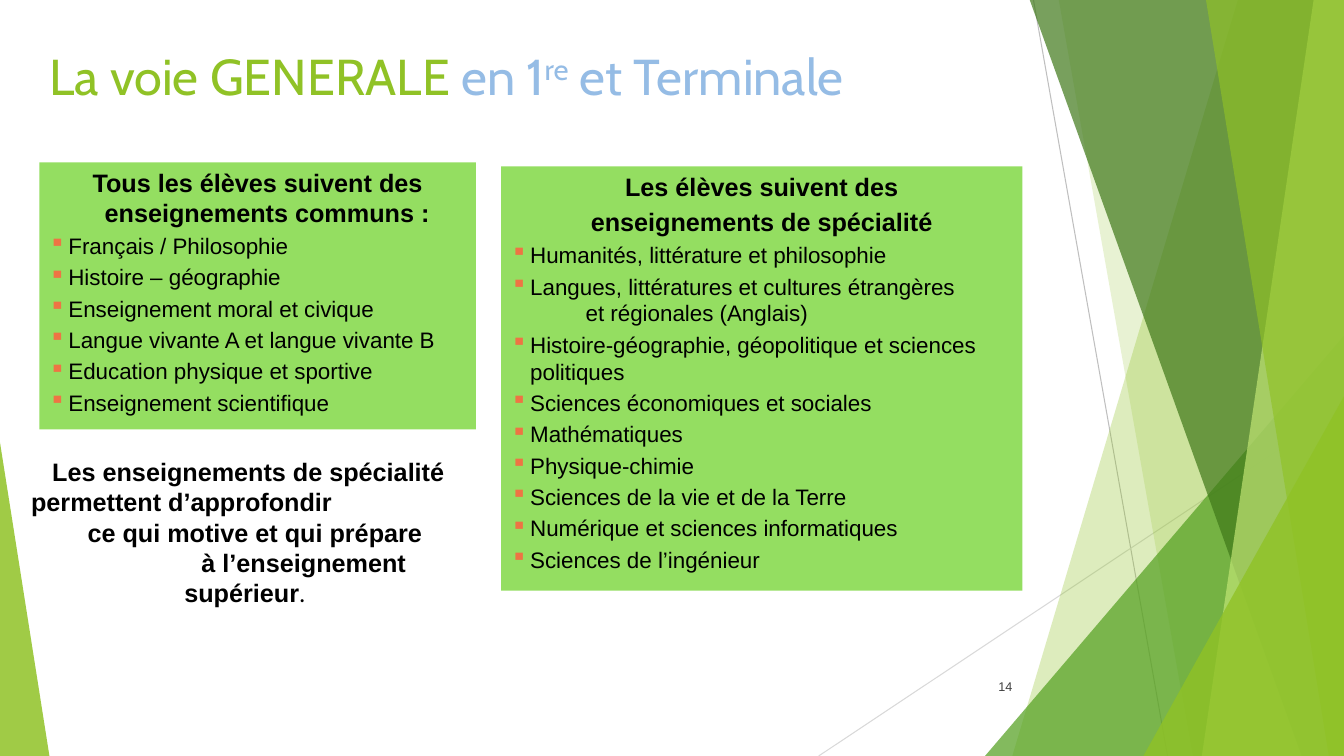
from lxml import etree
from pptx import Presentation
from pptx.dml.color import RGBColor
from pptx.enum.shapes import MSO_CONNECTOR, MSO_SHAPE
from pptx.enum.text import MSO_ANCHOR, MSO_AUTO_SIZE, PP_ALIGN
from pptx.oxml.ns import qn
from pptx.util import Inches, Pt

LEFT, CENTER, RIGHT = PP_ALIGN.LEFT, PP_ALIGN.CENTER, PP_ALIGN.RIGHT
TOP, MIDDLE = MSO_ANCHOR.TOP, MSO_ANCHOR.MIDDLE
RECT, TRIANGLE = MSO_SHAPE.RECTANGLE, MSO_SHAPE.RIGHT_TRIANGLE
ISOSCELES = MSO_SHAPE.ISOSCELES_TRIANGLE
STRAIGHT = MSO_CONNECTOR.STRAIGHT
GROW = MSO_AUTO_SIZE.SHAPE_TO_FIT_TEXT

BLACK = RGBColor(0x00, 0x00, 0x00)
DARK_GREY = RGBColor(0x40, 0x40, 0x40)
MID_GREY = RGBColor(0xBF, 0xBF, 0xBF)
LIGHT_GREY = RGBColor(0xD9, 0xD9, 0xD9)
LIME = RGBColor(0x90, 0xC2, 0x26)
PALE_LIME = RGBColor(0xC0, 0xE4, 0x74)
GREEN = RGBColor(0x54, 0xA0, 0x21)
DARK_GREEN = RGBColor(0x3F, 0x78, 0x19)
PANEL_GREEN = RGBColor(0x94, 0xDE, 0x61)
SKY = RGBColor(0x95, 0xBC, 0xE5)
BULLET = "EE7444"

WIDTH, HEIGHT, RIM = 13.33, 7.5, -0.01
HANG = 0.19


class Deck:
    font, head_size, item_size = "Arial", 18, 16

    def __init__(self):
        self.prs = Presentation()
        self.prs.slide_width, self.prs.slide_height = Inches(WIDTH), Inches(HEIGHT)
        self.s = self.prs.slides.add_slide(self.prs.slide_layouts[5])

    def paint(self, sp, color, opacity=100):
        sp.shadow.inherit = False
        sp.line.fill.background()
        sp.fill.solid()
        sp.fill.fore_color.rgb = color
        if opacity < 100:
            clr = sp.fill._xPr.find(qn("a:solidFill"))[0]
            etree.SubElement(clr, qn("a:alpha"), val=str(opacity * 1000))

    def line(self, x1, y1, x2, y2, color):
        c = self.s.shapes.add_connector(STRAIGHT, *map(Inches, (x1, y1, x2, y2)))
        c.line.color.rgb = color
        c.line.width = Pt(0.75)
        etree.SubElement(c._element.spPr, qn("a:effectLst"))

    def band(self, top_x, bottom_x, color, opacity):
        """Slanted band that reaches the right edge of the slide."""
        corners = [(WIDTH, RIM), (WIDTH, HEIGHT), (bottom_x, HEIGHT)]
        fb = self.s.shapes.build_freeform(Inches(top_x), Inches(RIM))
        fb.add_line_segments([(Inches(x), Inches(y)) for x, y in corners])
        self.paint(fb.convert_to_shape(), color, opacity)

    def triangle(self, x, y, w, apex, color, opacity):
        sp = self.s.shapes.add_shape(
            ISOSCELES, *map(Inches, (x, y, w, HEIGHT - y)))
        sp.adjustments[0] = apex
        self.paint(sp, color, opacity)

    def title(self, x, y, w, h, parts):
        sp = self.s.shapes.title
        sp.left, sp.top, sp.width, sp.height = map(Inches, (x, y, w, h))
        tf = sp.text_frame
        tf.vertical_anchor = TOP
        p = tf.paragraphs[0]
        p.alignment = LEFT
        p.font.name, p.font.size = "Cabin", Pt(36)
        for text, color, raised in parts:
            r = p.add_run()
            r.text = text
            r.font.color.rgb = color
            if raised:
                r.font._element.set("baseline", "30000")

    def paragraph(self, tf, text, size, bold=False, align=LEFT, before=0,
                  margin=0, indent=0, bullet=False, color=BLACK):
        p = tf.paragraphs[0]
        if p.runs:
            p = tf.add_paragraph()
        p.add_run().text = text
        p.alignment, p.space_before = align, Pt(before)
        f = p.font
        f.name, f.size, f.bold = self.font, Pt(size), bold
        f.color.rgb = color
        pPr = p._p.get_or_add_pPr()
        pPr.set("marL", str(Inches(margin)))
        pPr.set("indent", str(Inches(indent)))
        if bullet:
            mark = etree.Element(qn("a:buClr"))
            etree.SubElement(mark, qn("a:srgbClr"), val=BULLET)
            char = etree.Element(qn("a:buChar"), char="▪")
            pPr.find(qn("a:defRPr")).addprevious(mark)
            mark.addnext(char)
        return p

    def text_box(self, x, y, w, h, anchor=TOP):
        tf = self.s.shapes.add_textbox(*map(Inches, (x, y, w, h))).text_frame
        tf.word_wrap, tf.vertical_anchor = True, anchor
        return tf

    def panel(self, x, y, w, h, heads, hang, items):
        sp = self.s.shapes.add_shape(RECT, *map(Inches, (x, y, w, h)))
        self.paint(sp, PANEL_GREEN)
        tf = sp.text_frame
        tf.word_wrap, tf.vertical_anchor, tf.auto_size = True, TOP, GROW
        for head in heads:
            self.paragraph(tf, head, self.head_size, True, CENTER,
                           self.head_size * 0.2, hang, -hang)
        for item in items:
            first, *rest = item.split("\n")
            self.paragraph(tf, first, self.item_size, before=self.item_size * 0.2,
                           margin=HANG, indent=-HANG, bullet=True)
            for continuation in rest:
                self.paragraph(tf, continuation, self.item_size, margin=0.74)


def main():
    deck = Deck()

    # Backdrop
    deck.line(10.25, 0, 11.58, HEIGHT, MID_GREY)
    deck.line(WIDTH, 4.03, 8.12, HEIGHT, LIGHT_GREY)
    deck.band(12.28, 10.04, LIME, 30)
    deck.band(10.5, 11.83, LIME, 20)
    deck.triangle(9.77, 3.33, 3.56, 1, GREEN, 72)
    deck.band(10.21, 12.91, DARK_GREEN, 70)
    deck.band(13.03, 11.92, PALE_LIME, 70)
    deck.band(11.96, 13.18, LIME, 65)
    deck.triangle(11.34, 3.93, 1.99, 1, LIME, 80)
    deck.triangle(0, 4.39, 0.49, 0, LIME, 85)

    # Title and page number
    deck.title(0.39, 0.4, 9.61, 1.24, [
        ("La voie GENERALE ", LIME, False), ("en 1", SKY, False),
        ("re", SKY, True), (" et Terminale", SKY, False)])
    tf = deck.text_box(9.39, 6.61, 0.75, 0.4, MIDDLE)
    deck.paragraph(tf, "14", 9, align=RIGHT, color=DARK_GREY)

    # Common courses
    deck.panel(0.39, 1.61, 4.33, 2.65,
               ["Tous les élèves suivent des enseignements communs :"], HANG, [
                   "Français / Philosophie",
                   "Histoire – géographie",
                   "Enseignement moral et civique",
                   "Langue vivante A et langue vivante B",
                   "Education physique et sportive",
                   "Enseignement scientifique"])

    # Purpose of the specialities, one indent per line
    tf = deck.text_box(0.21, 4.48, 4.51, 1.31)
    tf.auto_size = GROW
    for text, margin in [("Les enseignements de spécialité", 0.21),
                         ("permettent d’approfondir", 0),
                         ("ce qui motive et qui prépare", 0.56),
                         ("à l’enseignement", 1.69),
                         ("supérieur", 1.52)]:
        p = deck.paragraph(tf, text, deck.head_size, True, margin=margin)
    r = p.add_run()
    r.text = "."
    r.font.name, r.font.bold = "Calibri", False

    # Speciality courses
    deck.panel(4.97, 1.65, 5.17, 4.21,
               ["Les élèves suivent des", "enseignements de spécialité"], 0, [
                   "Humanités, littérature et philosophie",
                   "Langues, littératures et cultures étrangères\net régionales (Anglais)",
                   "Histoire-géographie, géopolitique et sciences politiques",
                   "Sciences économiques et sociales",
                   "Mathématiques",
                   "Physique-chimie",
                   "Sciences de la vie et de la Terre",
                   "Numérique et sciences informatiques",
                   "Sciences de l’ingénieur"])

    deck.prs.save("out.pptx")


if __name__ == "__main__":
    main()
